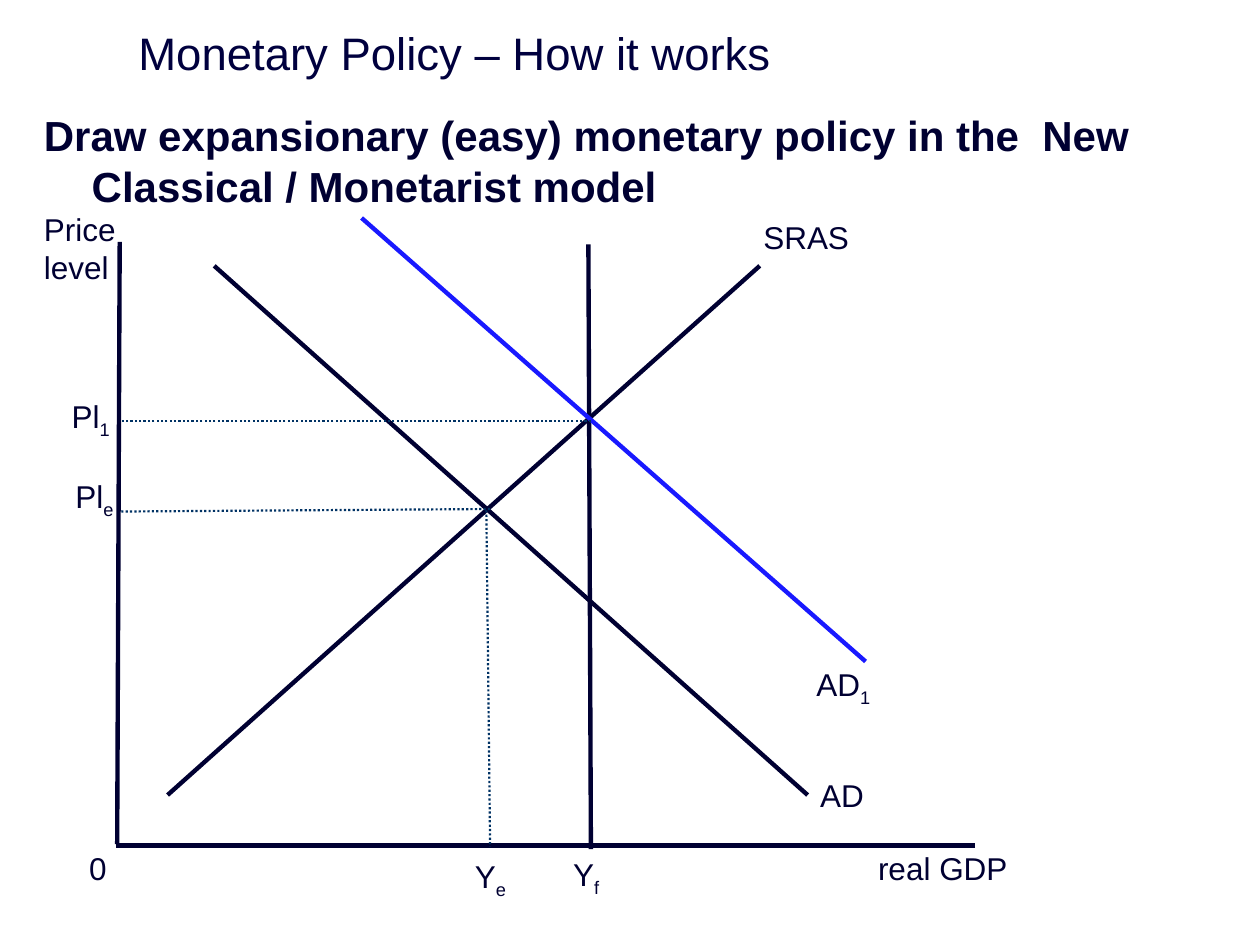
import pptx
import pptx.util
import pptx.dml.color
import pptx.enum.dml
import pptx.enum.shapes
import pptx.enum.text
import pptx.oxml.ns
import lxml.etree

Inches = pptx.util.Inches
Pt = pptx.util.Pt
qn = pptx.oxml.ns.qn
anchor = pptx.enum.text.MSO_ANCHOR
dash = pptx.enum.dml.MSO_LINE


def color(code):
    return pptx.dml.color.RGBColor.from_string(code)


def write(spot, lines, look, frame):
    box = slide.shapes.add_textbox(*[Inches(n) for n in spot]).text_frame
    for key, val in {"word_wrap": True, **frame}.items():
        setattr(box, key, val)
    for i, (main, sub) in enumerate(lines):
        par = box.paragraphs[0] if i == 0 else box.add_paragraph()
        for text, base in ((main, None), (sub, "-25000")):
            if text:
                run = par.add_run()
                run.text = text
                for key, val in look.items():
                    if key == "color":
                        run.font.color.rgb = color(val)
                    else:
                        setattr(run.font, key, val)
                if base:
                    run._r.get_or_add_rPr().set("baseline", base)
    return box


deck = pptx.Presentation()
deck.slide_width = Inches(10)
deck.slide_height = Inches(7.5)
slide = deck.slides.add_slide(deck.slide_layouts[6])

navy = "000032"
label = {"name": "Arial", "size": Pt(18), "color": navy}
title = {**label, "size": Pt(26), "color": "00003E"}
task = {**label, "size": Pt(24), "bold": True}

write((1, 0.16, 9, 0.51), [("Monetary Policy – How it works", "")], title,
      {"vertical_anchor": anchor.MIDDLE})
body = write((0.25, 0.78, 8.83, 4.95),
             [("Draw expansionary (easy) monetary policy in the  New Classical / Monetarist model", "")],
             task, {"margin_top": Inches(0.09)})
props = body.paragraphs[0]._p.get_or_add_pPr()
for key, val in {"marL": 0.38, "indent": -0.38}.items():
    props.set(key, str(Inches(val)))

solid = {"color": navy, "width": Pt(2.5)}
shift = {**solid, "color": "1919FF"}
guide = {"color": "003264", "width": Pt(1.25), "dash_style": dash.ROUND_DOT}
lines = [
    (0.95, 1.92, 0.93, 6.7, solid),
    (7.74, 6.71, 0.92, 6.71, solid),
    (6.03, 2.11, 1.33, 6.31, solid),
    (1.7, 2.11, 6.41, 6.31, solid),
    (3.89, 4.04, 0.95, 4.06, guide),
    (3.86, 4.05, 3.89, 6.72, guide),
    (4.67, 1.94, 4.69, 6.74, solid),
    (2.87, 1.73, 6.87, 5.25, shift),
    (4.69, 3.34, 0.96, 3.34, guide),
]
for *ends, look in lines:
    line = slide.shapes.add_connector(
        pptx.enum.shapes.MSO_CONNECTOR.STRAIGHT, *[Inches(n) for n in ends])
    for key, val in look.items():
        if key == "color":
            line.line.color.rgb = color(val)
        else:
            setattr(line.line, key, val)
    lxml.etree.SubElement(line._element.spPr, qn("a:effectLst"))

labels = [
    (6.87, 6.69, 1.29, [("real GDP", "")]),
    (0.61, 6.69, 0.64, [("0", "")]),
    (0.25, 1.62, 0.88, [("Price", ""), ("level", "")]),
    (5.96, 1.68, 0.9, [("SRAS", "")]),
    (6.41, 6.11, 0.81, [("AD", "")]),
    (6.38, 5.23, 0.81, [("AD", "1")]),
    (0.47, 3.1, 0.75, [("Pl", "1")]),
    (0.5, 3.74, 0.75, [("Pl", "e")]),
    (3.67, 6.75, 0.55, [("Y", "e")]),
    (4.45, 6.74, 0.44, [("Y", "f")]),
]
fit = {"auto_size": pptx.enum.text.MSO_AUTO_SIZE.SHAPE_TO_FIT_TEXT}
for left, top, width, text in labels:
    write((left, top, width, 0.1 + 0.3 * len(text)), text, label, fit)

deck.save("out.pptx")
